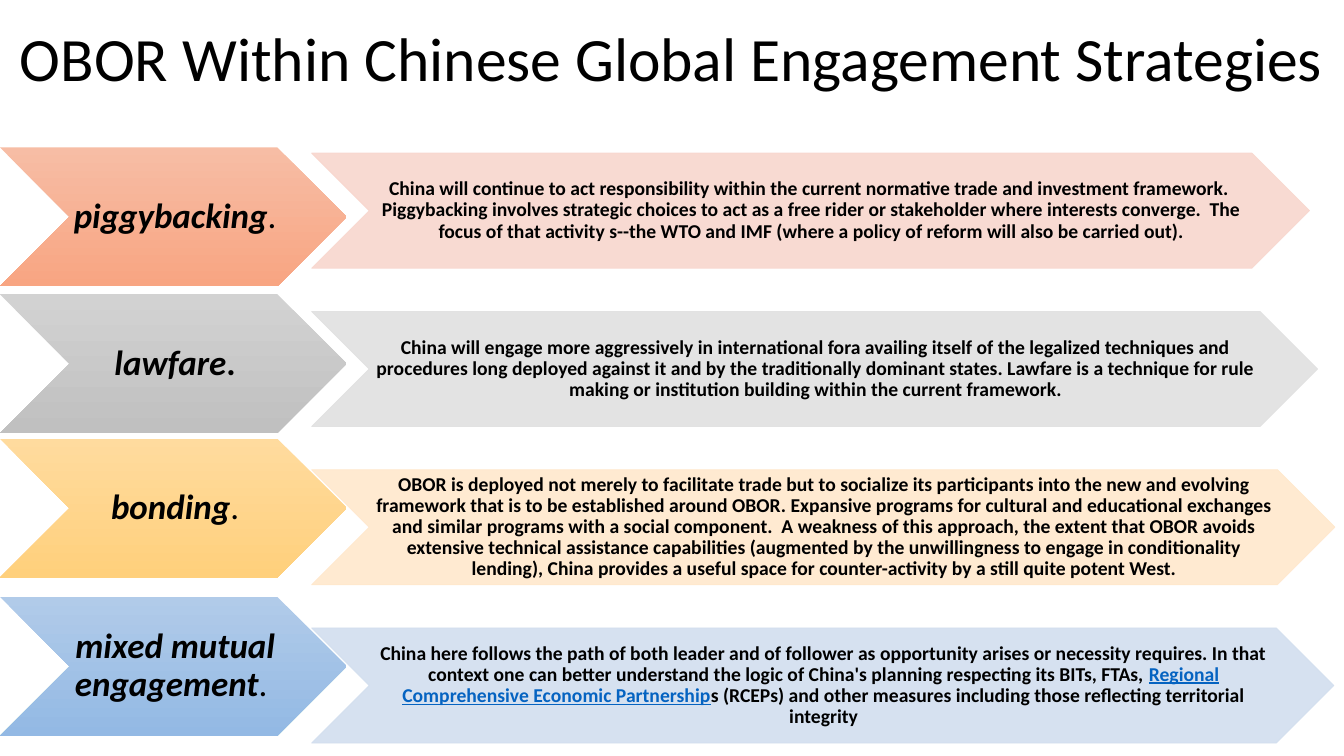
from lxml import etree
from pptx import Presentation
from pptx.dml.color import RGBColor
from pptx.enum.shapes import MSO_SHAPE
from pptx.enum.text import MSO_ANCHOR, MSO_AUTO_SIZE, PP_ALIGN
from pptx.oxml.ns import qn
from pptx.util import Pt

CHEVRON = MSO_SHAPE.CHEVRON
MIDDLE = MSO_ANCHOR.MIDDLE
CENTER = PP_ALIGN.CENTER
NO_AUTOFIT = MSO_AUTO_SIZE.NONE

BLACK = RGBColor(0x00, 0x00, 0x00)
LINK_BLUE = RGBColor(0x05, 0x63, 0xC1)
ORANGE = (RGBColor(0xF7, 0xBD, 0xA5), RGBColor(0xF8, 0xA5, 0x82))
GRAY = (RGBColor(0xD2, 0xD2, 0xD2), RGBColor(0xC0, 0xC0, 0xC0))
GOLD = (RGBColor(0xFF, 0xDB, 0x9E), RGBColor(0xFF, 0xD0, 0x7C))
BLUE = (RGBColor(0xB1, 0xCB, 0xE9), RGBColor(0x93, 0xB9, 0xE4))
PALE_ORANGE = RGBColor(0xF8, 0xD7, 0xCE)
PALE_GRAY = RGBColor(0xE1, 0xE1, 0xE1)
PALE_GOLD = RGBColor(0xFF, 0xE8, 0xCC)
PALE_BLUE = RGBColor(0xD2, 0xDE, 0xEF)

SLIDE_WIDTH, SLIDE_HEIGHT = 960, 540
LABEL_WIDTH, LABEL_HEIGHT = 247.7, 99.2
DETAIL_LEFT, DETAIL_TOP, DETAIL_HEIGHT, DETAIL_STEP = 222.6, 109.4, 82.2, 113.05

TITLE_FORMAT = {"size": Pt(44), "bold": False}
LABEL_FORMAT = {"size": Pt(25), "bold": True, "italic": True}
PLAIN_LABEL = {"size": Pt(25), "bold": False, "italic": False}
UPRIGHT_LABEL = {"size": Pt(25), "bold": True, "italic": False}
DETAIL_FORMAT = {"size": Pt(14), "bold": True}
LINK_FORMAT = {"size": Pt(14), "bold": True, "underline": True}

# Label top, label runs, label gradient, detail width, detail runs, detail colour
STRATEGIES = [
    (105.3, [("piggybacking", LABEL_FORMAT), (".", PLAIN_LABEL)], ORANGE, 712.8,
     [("China will continue to act responsibility within the current normative trade "
       "and investment framework.  Piggybacking involves strategic choices to act as "
       "a free rider or stakeholder where interests converge.  The focus of that "
       "activity s--the WTO and IMF (where a policy of reform will also be carried "
       "out).", DETAIL_FORMAT)], PALE_ORANGE),
    (210.2, [("lawfare", LABEL_FORMAT), (".", UPRIGHT_LABEL)], GRAY, 718.6,
     [("China will engage more aggressively in international fora availing itself of "
       "the legalized techniques and procedures long deployed against it and by the "
       "traditionally dominant states. Lawfare is a technique for rule making or "
       "institution building within the current framework.", DETAIL_FORMAT)], PALE_GRAY),
    (313.4, [("bonding", LABEL_FORMAT), (".", PLAIN_LABEL)], GOLD, 731,
     [("OBOR is deployed not merely to facilitate trade but to socialize its "
       "participants into the new and evolving framework that is to be established "
       "around OBOR. Expansive programs for cultural and educational exchanges and "
       "similar programs with a social component.  A weakness of this approach, the "
       "extent that OBOR avoids extensive technical assistance capabilities "
       "(augmented by the unwillingness to engage in conditionality lending), China "
       "provides a useful space for counter-activity by a still quite potent West.",
       DETAIL_FORMAT)], PALE_GOLD),
    (426.4, [("mixed mutual engagement", LABEL_FORMAT), (". ", PLAIN_LABEL)], BLUE, 730.2,
     [("China here follows the path of both leader and of follower as opportunity "
       "arises or necessity requires. In that context one can better understand the "
       "logic of China's planning respecting its BITs, FTAs, ", DETAIL_FORMAT),
      ("Regional Comprehensive Economic Partnership", LINK_FORMAT),
      ("s (RCEPs) and other measures including those reflecting territorial "
       "integrity", DETAIL_FORMAT)], PALE_BLUE),
]


def write_runs(text_frame, runs):
    text_frame.word_wrap = True
    text_frame.auto_size = NO_AUTOFIT
    text_frame.vertical_anchor = MIDDLE
    paragraph = text_frame.paragraphs[0]
    paragraph.alignment = CENTER
    paragraph.line_spacing = 0.9
    for text, font_format in runs:
        run = paragraph.add_run()
        run.text = text
        run.font.name = "Calibri"
        run.font.color.rgb = LINK_BLUE if font_format is LINK_FORMAT else BLACK
        for name, value in font_format.items():
            setattr(run.font, name, value)


def add_chevron(slide, left, top, width, height, runs, margins):
    shape = slide.shapes.add_shape(CHEVRON, Pt(left), Pt(top), Pt(width), Pt(height))
    shape.shadow.inherit = False
    for name, value in margins.items():
        setattr(shape.text_frame, name, Pt(value))
    write_runs(shape.text_frame, runs)
    return shape


def add_label(slide, top, runs, gradient):
    margins = {"margin_left": 2.5, "margin_top": 1.25, "margin_right": 0, "margin_bottom": 1.25}
    shape = add_chevron(slide, 0, top, LABEL_WIDTH, LABEL_HEIGHT, runs, margins)
    shape.fill.gradient()
    shape.fill.gradient_angle = 270
    for stop, position, color in zip(shape.fill.gradient_stops, (0, 1), gradient):
        stop.position = position
        stop.color.rgb = color
    shape.line.fill.background()


def add_detail(slide, top, width, runs, color):
    margins = {"margin_left": 1.4, "margin_top": 0.7, "margin_right": 0, "margin_bottom": 0.7}
    shape = add_chevron(slide, DETAIL_LEFT, top, width, DETAIL_HEIGHT, runs, margins)
    shape.line.width = Pt(0.5)
    for fill in (shape.fill, shape.line.fill):
        fill.solid()
        fill.fore_color.rgb = color
    for color_element in shape.element.spPr.iter(qn("a:srgbClr")):
        etree.SubElement(color_element, qn("a:alpha"), val="90000")


def set_title(slide, text):
    title = slide.shapes.title
    title.left, title.top = Pt(0), Pt(0)
    title.width, title.height = Pt(SLIDE_WIDTH), Pt(88.6)
    write_runs(title.text_frame, [(text, TITLE_FORMAT)])


def main():
    presentation = Presentation()
    presentation.slide_width = Pt(SLIDE_WIDTH)
    presentation.slide_height = Pt(SLIDE_HEIGHT)
    slide = presentation.slides.add_slide(presentation.slide_layouts[5])
    set_title(slide, "OBOR Within Chinese Global Engagement Strategies")
    for row, strategy in enumerate(STRATEGIES):
        label_top, label_runs, gradient, detail_width, detail_runs, pale_color = strategy
        add_label(slide, label_top, label_runs, gradient)
        detail_top = DETAIL_TOP + row * DETAIL_STEP
        add_detail(slide, detail_top, detail_width, detail_runs, pale_color)
    presentation.save("out.pptx")


if __name__ == "__main__":
    main()
